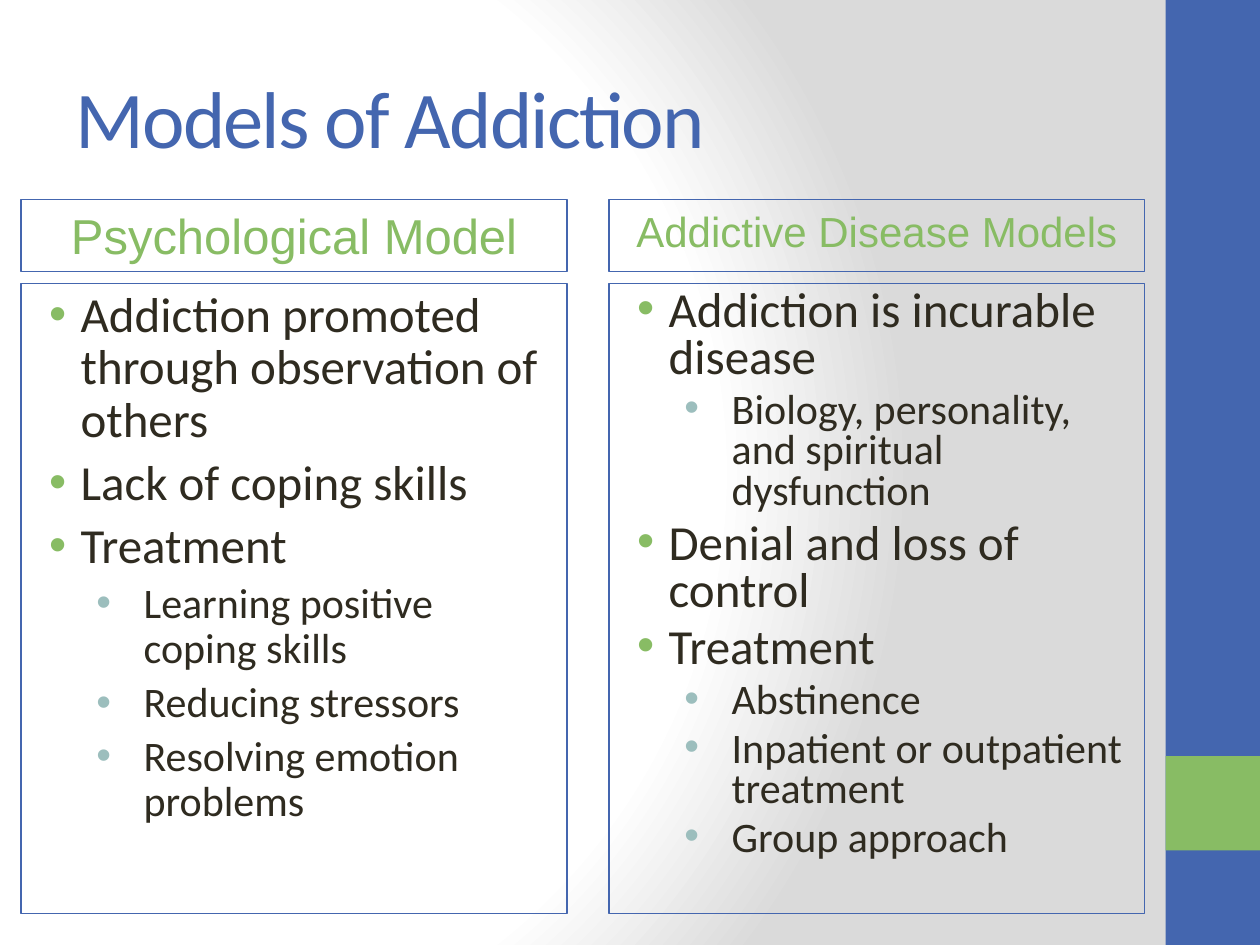
"""Build the slide comparing two models of addiction."""
from pptx import Presentation
from pptx.dml.color import RGBColor
from pptx.enum.shapes import MSO_SHAPE as SHAPE
from pptx.enum.text import MSO_ANCHOR as ANCHOR, PP_ALIGN as ALIGN
from pptx.oxml import parse_xml
from pptx.oxml.ns import nsdecls, qn
from pptx.util import Pt

BLUE, GREEN, TEAL, INK = "4466AF", "88BC64", "9CBEBD", "2F2B20"


def color(value):
    return RGBColor.from_string(value)


def add_box(left, top, width, height, fill=None):
    box = slide.shapes.add_shape(SHAPE.RECTANGLE, Pt(left), Pt(top), Pt(width), Pt(height))
    box.shadow.inherit = False
    if fill:
        box.fill.solid()
        box.fill.fore_color.rgb = color(fill)
        box.line.fill.background()
    else:
        box.fill.background()
        box.line.color.rgb = color(BLUE)
        box.line.width = Pt(0.75)
    box.text_frame.word_wrap = True
    box.text_frame.vertical_anchor = ANCHOR.TOP
    return box.text_frame


prs = Presentation()
prs.slide_width, prs.slide_height = Pt(720), Pt(540)
slide = prs.slides.add_slide(prs.slide_layouts[6])

stops = "".join(
    f'<a:gs pos="{position}000"><a:srgbClr val="{shade}"/></a:gs>'
    for position, shade in [(0, "FFFFFF"), (75, "FFFFFF"), (100, "DADADA")]
)
slide.element.cSld.insert(0, parse_xml(
    f'<p:bg {nsdecls("p", "a")}><p:bgPr><a:gradFill rotWithShape="1"><a:gsLst>{stops}</a:gsLst>'
    '<a:path path="circle"><a:fillToRect l="20000" t="50000" r="100000" b="50000"/></a:path>'
    '</a:gradFill><a:effectLst/></p:bgPr></p:bg>'
))

add_box(666, 0, 54, 540, BLUE)
add_box(666, 432, 54, 54, GREEN)

models = [
    (12, 312, "Psychological Model", 28, 0.9, [
        (0, "Addiction promoted through observation of others"),
        (0, "Lack of coping skills"),
        (0, "Treatment"),
        (1, "Learning positive coping skills"),
        (1, "Reducing stressors"),
        (1, "Resolving emotion problems"),
    ]),
    (348, 306, "Addictive Disease Models", 24, 0.8, [
        (0, "Addiction is incurable disease"),
        (1, "Biology, personality, and spiritual dysfunction"),
        (0, "Denial and loss of control"),
        (0, "Treatment"),
        (1, "Abstinence"),
        (1, "Inpatient or outpatient treatment"),
        (1, "Group approach"),
    ]),
]
levels = [(28, 27, -18, GREEN), (24, 63, -27, TEAL)]

for left, width, name, name_size, spacing, points in models:
    heading = add_box(left, 114, width, 41).paragraphs[0]
    heading.text = name
    heading.alignment = ALIGN.CENTER
    heading.font.name = "Arial"
    heading.font.size = Pt(name_size)
    heading.font.color.rgb = color(GREEN)

    body = add_box(left, 162, width, 360)
    for index, (level, point) in enumerate(points):
        size, margin, indent, bullet_color = levels[level]
        item = body.paragraphs[0] if index == 0 else body.add_paragraph()
        item.text = point
        item.level = level
        item.alignment = ALIGN.LEFT
        item.line_spacing = spacing
        item.space_before = Pt(size * 0.2)
        item.font.name = "Calibri"
        item.font.size = Pt(size)
        item.font.color.rgb = color(INK)
        props = item._p.get_or_add_pPr()
        props.set("marL", str(Pt(margin)))
        props.set("indent", str(Pt(indent)))
        bullet = parse_xml(f'<a:buClr {nsdecls("a")}><a:srgbClr val="{bullet_color}"/></a:buClr>')
        props.find(qn("a:spcBef")).addnext(bullet)
        bullet.addnext(parse_xml(f'<a:buChar {nsdecls("a")} char="•"/>'))
        bullet.addnext(parse_xml(f'<a:buFont {nsdecls("a")} typeface="Arial"/>'))

title_frame = slide.shapes.add_textbox(Pt(36), Pt(21.6), Pt(600), Pt(90)).text_frame
title_frame.word_wrap = True
title_frame.vertical_anchor = ANCHOR.MIDDLE
title = title_frame.paragraphs[0].add_run()
title.text = "Models of Addiction"
title.font.name = "Calibri"
title.font.size = Pt(46)
title.font.color.rgb = color(BLUE)
title._r.get_or_add_rPr().set("spc", "-100")

prs.save("out.pptx")
